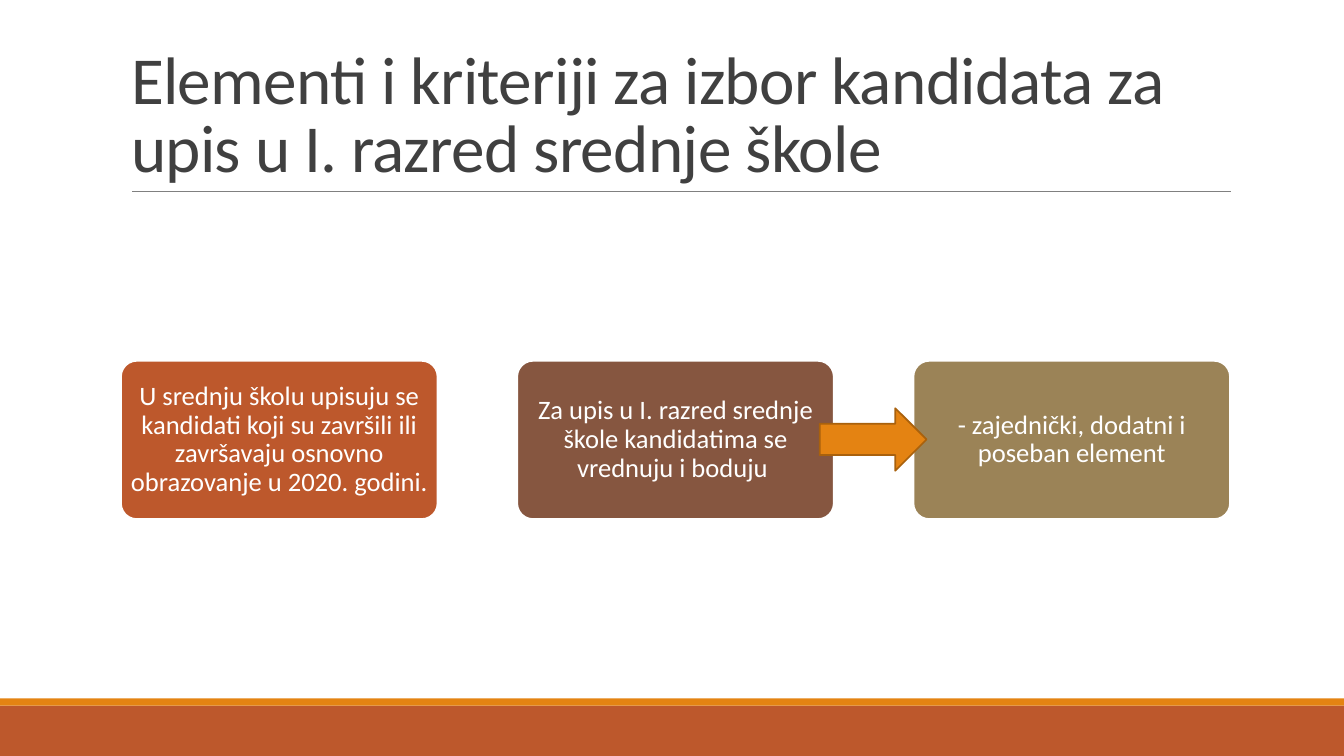
from pptx import Presentation
from pptx.dml.color import RGBColor
from pptx.enum import shapes, text
from pptx.oxml.ns import qn
from pptx.util import Inches, Pt
from lxml import etree


def paint(item, fill, line=None, width=1.25):
    """Set fill and outline; no line colour means no outline."""
    item.shadow.inherit = False
    item.fill.solid()
    item.fill.fore_color.rgb = RGBColor.from_string(fill)
    if line:
        item.line.color.rgb = RGBColor.from_string(line)
        item.line.width = Pt(width)
    else:
        item.line.fill.background()


def write(item, words, size, color, align, anchor, leading, margins, tracking=0):
    frame = item.text_frame
    frame.word_wrap = True
    frame.auto_size = text.MSO_AUTO_SIZE.NONE
    frame.vertical_anchor = anchor
    frame.margin_left = frame.margin_right = Inches(margins[0])
    frame.margin_top = frame.margin_bottom = Inches(margins[1])
    para = frame.paragraphs[0]
    para.alignment = align
    para.line_spacing = leading
    span = para.add_run()
    span.text = words
    span.font.name = "Calibri"
    span.font.size = Pt(size)
    span.font.color.rgb = RGBColor.from_string(color)
    if tracking:
        span.font._element.set("spc", str(int(tracking * 100)))


deck = Presentation()
deck.slide_width, deck.slide_height = Inches(13.33), Inches(7.5)
page = deck.slides.add_slide(deck.slide_layouts[5])

# Footer bands
for top, height, color in [(7, 0.5, "BD582C"), (6.93, 0.07, "E48312")]:
    band = page.shapes.add_shape(shapes.MSO_SHAPE.RECTANGLE, 0, Inches(top),
                                 deck.slide_width, Inches(height))
    paint(band, color)

# Title and the rule below it
title = page.shapes.title
title.left, title.top = Inches(1.2), Inches(0.31)
title.width, title.height = Inches(11), Inches(1.59)
write(title, "Elementi i kriteriji za izbor kandidata za upis u I. razred srednje škole",
      48, "404040", text.PP_ALIGN.LEFT, text.MSO_ANCHOR.BOTTOM, 0.85, (0.1, 0.05),
      tracking=-0.5)

rule = page.shapes.add_connector(shapes.MSO_CONNECTOR.STRAIGHT, Inches(1.31),
                                 Inches(1.9), Inches(12.21), Inches(1.9))
rule.line.color.rgb = RGBColor.from_string("808080")
rule.line.width = Pt(0.5)
etree.SubElement(rule._element.spPr, qn("a:effectLst"))

# Three steps at an equal pitch
steps = [
    ("U srednju školu upisuju se kandidati koji su završili ili završavaju "
     "osnovno obrazovanje u 2020. godini. ", "BD582C"),
    ("Za upis u I. razred srednje škole kandidatima se vrednuju i boduju ", "865640"),
    ("- zajednički, dodatni i poseban element", "9B8357"),
]
for index, (words, color) in enumerate(steps):
    step = page.shapes.add_shape(shapes.MSO_SHAPE.ROUNDED_RECTANGLE,
                                 Inches(1.2 + index * 3.93), Inches(3.58),
                                 Inches(3.14), Inches(1.57))
    step.adjustments[0] = 0.1
    paint(step, color, "FFFFFF")
    write(step, words, 19, "FFFFFF", text.PP_ALIGN.CENTER, text.MSO_ANCHOR.MIDDLE,
          0.9, (0.04, 0.03))

# Arrow from the second step to the third
arrow = page.shapes.add_shape(shapes.MSO_SHAPE.RIGHT_ARROW, Inches(8.13), Inches(4.05),
                              Inches(1.06), Inches(0.62))
paint(arrow, "E48312", "A9610D")

deck.save("out.pptx")
